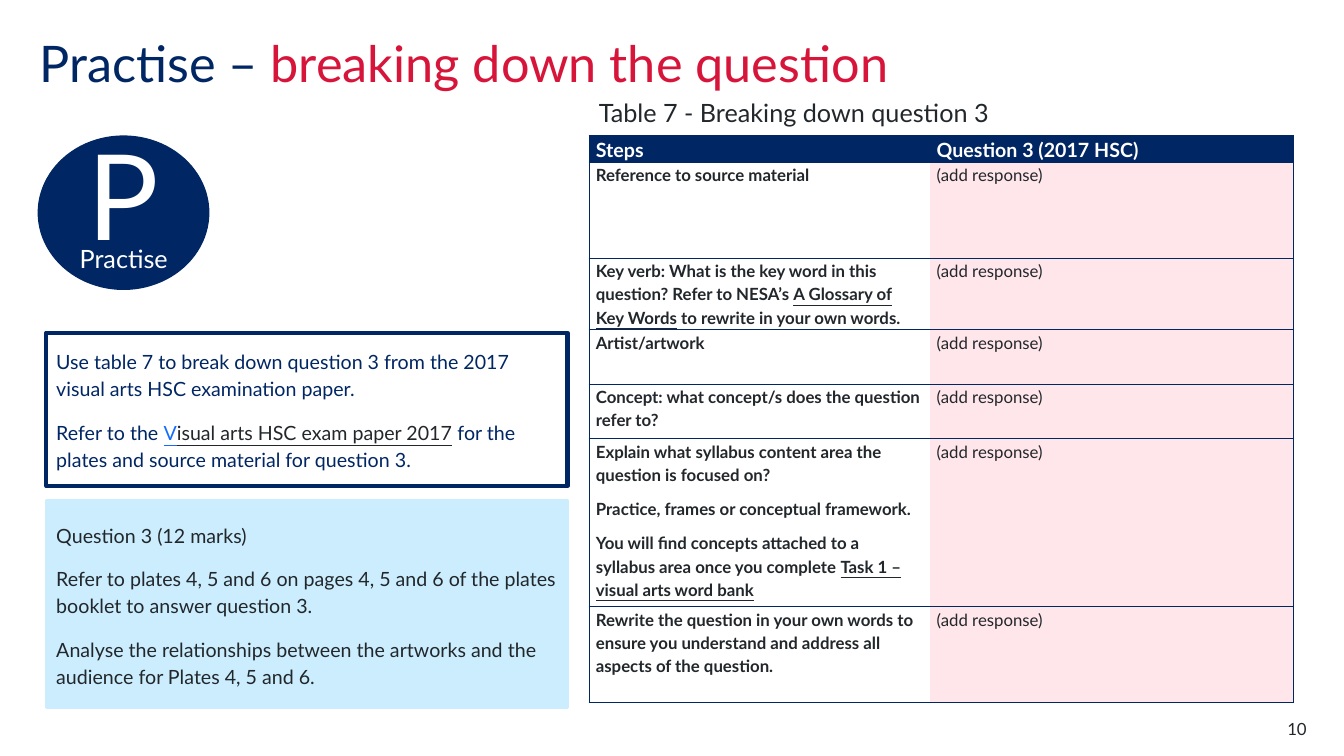
"""Build the slide 'Practise – breaking down the question'."""
from lxml import etree
from pptx import Presentation
from pptx.dml.color import RGBColor
from pptx.enum.shapes import MSO_SHAPE
from pptx.enum.text import MSO_ANCHOR, PP_ALIGN
from pptx.oxml.ns import qn
from pptx.util import Inches, Pt

RECTANGLE, OVAL = MSO_SHAPE.RECTANGLE, MSO_SHAPE.OVAL
TOP, MIDDLE = MSO_ANCHOR.TOP, MSO_ANCHOR.MIDDLE
LEFT, CENTER, RIGHT = PP_ALIGN.LEFT, PP_ALIGN.CENTER, PP_ALIGN.RIGHT
NAVY = RGBColor(0x00, 0x26, 0x64)
RED = RGBColor(0xD7, 0x15, 0x3A)
BLUE = RGBColor(0x14, 0x6C, 0xFD)
DARK = RGBColor(0x22, 0x27, 0x2B)
PALE_BLUE = RGBColor(0xCB, 0xED, 0xFD)
PINK = RGBColor(0xFF, 0xE6, 0xEA)
WHITE = RGBColor(0xFF, 0xFF, 0xFF)
FONT = "Lato"


def write(frame, paragraphs, size, color, bold=False, align=LEFT, spacing=1.0,
          before=0, after=0, anchor=TOP, margins=(0.1, 0.05, 0.1, 0.05)):
    """Fill a text frame; a run is a string or (text, color, underline)."""
    frame.word_wrap = True
    frame.vertical_anchor = anchor
    (frame.margin_left, frame.margin_top,
     frame.margin_right, frame.margin_bottom) = map(Inches, margins)
    for index, runs in enumerate(paragraphs):
        paragraph = frame.add_paragraph() if index else frame.paragraphs[0]
        paragraph.alignment = align
        paragraph.line_spacing = spacing
        paragraph.space_before = Pt(before if index else 0)
        paragraph.space_after = Pt(after)
        for item in runs:
            text, run_color, underline = (item, color, False) if isinstance(item, str) else item
            run = paragraph.add_run()
            run.text = text
            run.font.name = FONT
            run.font.size = Pt(size)
            run.font.bold = bold
            run.font.underline = underline
            run.font.color.rgb = run_color


def set_borders(cell, sides):
    """Draw thin navy lines on the named sides of a cell and none on the others."""
    properties = cell._tc.get_or_add_tcPr()
    for side in "LRTB":
        line = etree.SubElement(properties, qn(f"a:ln{side}"), w=str(Pt(0.5)))
        if side in sides:
            fill = etree.SubElement(line, qn("a:solidFill"))
            etree.SubElement(fill, qn("a:srgbClr"), val=str(NAVY))
        else:
            etree.SubElement(line, qn("a:noFill"))


presentation = Presentation()
presentation.slide_width, presentation.slide_height = Inches(13.33), Inches(7.5)
slide = presentation.slides.add_slide(presentation.slide_layouts[6])

FLUSH = (0, 0, 0, 0)
BODY = dict(size=14, spacing=1.15, before=12, anchor=MIDDLE)

panels = [
    (OVAL, (0.38, 1.35, 1.69, 1.52), NAVY, NAVY, 1, [["P"]],
     dict(size=85, color=WHITE, align=CENTER, anchor=MIDDLE, margins=(0.1, 0.05, 0.1, 0.45))),
    (RECTANGLE, (0.46, 3.3, 5.17, 1.52), WHITE, NAVY, 3,
     [["Use table 7 to break down question 3 from the 2017 visual arts HSC examination paper."],
      ["Refer to the ", ("V", BLUE, True), ("isual arts HSC exam paper 2017", DARK, True),
       " for the plates and source material for question 3."]],
     dict(BODY, color=NAVY)),
    (RECTANGLE, (0.46, 4.97, 5.17, 2.05), PALE_BLUE, PALE_BLUE, 2.25,
     [["Question 3 (12 marks)"],
      ["Refer to plates 4, 5 and 6 on pages 4, 5 and 6 of the plates booklet to answer question 3."],
      ["Analyse the relationships between the artworks and the audience for Plates 4, 5 and 6."]],
     dict(BODY, color=DARK)),
]
for kind, box, fill_color, line_color, line_width, paragraphs, text_format in panels:
    shape = slide.shapes.add_shape(kind, *map(Inches, box))
    shape.shadow.inherit = False
    shape.fill.solid()
    shape.fill.fore_color.rgb = fill_color
    shape.line.color.rgb = line_color
    shape.line.width = Pt(line_width)
    write(shape.text_frame, paragraphs, **text_format)

labels = [
    ((0.39, 0.39, 11.02, 0.6), ["Practise – ", ("breaking down the question", RED, False)],
     dict(size=36, color=NAVY, spacing=0.9, margins=FLUSH)),
    ((0.79, 2.41, 1.2, 0.35), ["Practise"], dict(size=18, color=WHITE, margins=FLUSH)),
    ((5.84, 1.05, 6.99, 0.29), ["Table 7 - Breaking down question 3"],
     dict(size=18, color=DARK, spacing=Pt(12))),
    ((12.17, 7.13, 0.79, 0.2), ["10"], dict(size=12, color=DARK, align=RIGHT, margins=FLUSH)),
]
for box, runs, text_format in labels:
    label = slide.shapes.add_textbox(*map(Inches, box))
    write(label.text_frame, [runs], **text_format)

steps = [
    (0.95, [["Reference to source material"]]),
    (0.71, [["Key verb: What is the key word in this question? Refer to NESA’s ",
             ("A Glossary of Key Words", DARK, True), " to rewrite in your own words."]]),
    (0.54, [["Artist/artwork"]]),
    (0.54, [["Concept: what concept/s does the question refer to?"]]),
    (1.67, [["Explain what syllabus content area the question is focused on?"],
            ["Practice, frames or conceptual framework."],
            ["You will find concepts attached to a syllabus area once you complete ",
             ("Task 1 – visual arts word bank", DARK, True)]]),
    (0.95, [["Rewrite the question in your own words to ensure you understand and address all "
             "aspects of the question."]]),
]
rows = [(0.27, [["Steps"]], [["Question 3 (2017 HSC)"]])]
rows += [(height, step, [["(add response)"]]) for height, step in steps]

table_height = sum(row[0] for row in rows)
table = slide.shapes.add_table(len(rows), 2, Inches(5.84), Inches(1.34),
                               Inches(6.99), Inches(table_height)).table
table.horz_banding = False
for column, width in zip(table.columns, (3.38, 3.61)):
    column.width = Inches(width)
for row_index, (height, *contents) in enumerate(rows):
    table.rows[row_index].height = Inches(height)
    is_header = row_index == 0
    for column_index, paragraphs in enumerate(contents):
        cell = table.cell(row_index, column_index)
        set_borders(cell, "RTB" if column_index else "LTB")
        cell.fill.solid()
        cell.fill.fore_color.rgb = NAVY if is_header else (WHITE, PINK)[column_index]
        write(cell.text_frame, paragraphs, size=14 if is_header else 12,
              color=WHITE if is_header else DARK, bold=is_header or column_index == 0,
              spacing=1.15, before=4, after=4, margins=FLUSH)
        cell.margin_left = cell.margin_right = Inches(0.07)
        cell.margin_top = cell.margin_bottom = 0

presentation.save("out.pptx")
